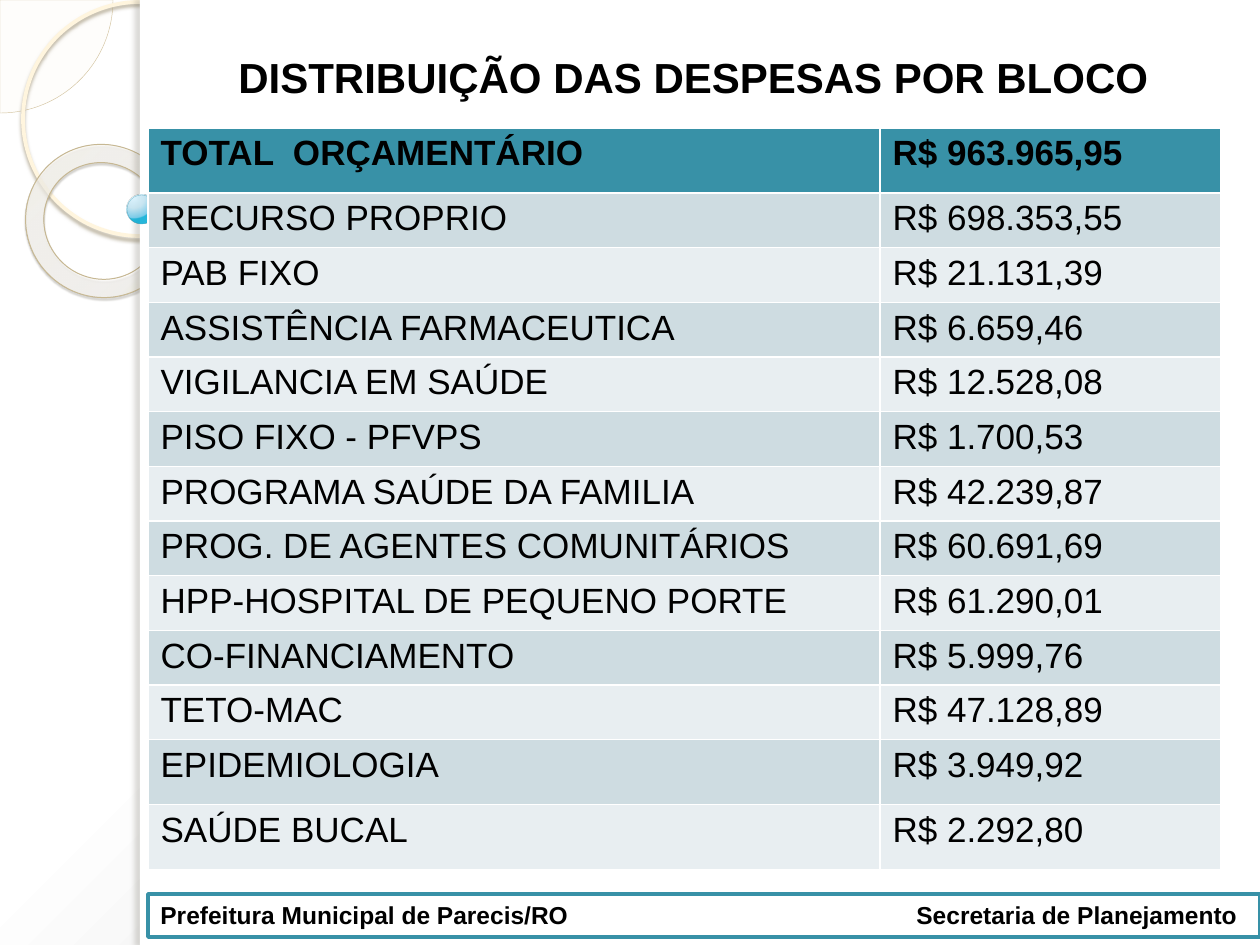
from lxml.etree import SubElement
from pptx import Presentation
from pptx.dml.color import RGBColor
from pptx.enum.shapes import MSO_SHAPE
from pptx.enum.text import MSO_ANCHOR, PP_ALIGN
from pptx.oxml.ns import qn
from pptx.util import Pt

PX = 914400 / 126
COLORS = {
    "white": "FFFFFF", "black": "000000", "teal": "3891A7",
    "band_dark": "CEDCE1", "band_light": "E8EEF1", "gray": "C5C5C5",
    "cream": "FEFAF4", "sand": "D3C39F", "ivory": "FFF5DE", "ring_line": "C7B893",
    "ring_pale": "FFFCF6", "ring_mid": "FFFEFB", "ring_gold": "F0D28E",
    "halo_shade": "B0A68F", "ring_shade": "5A5444", "edge_shade": "736F63",
    "bead_pale": "DAF4FF", "bead_soft": "C3E3F0", "bead_blue": "6BC7E8",
    "bead_deep": "00ABD5", "bead_line": "308EA5", "dot_line": "318093",
}


def write_text(frame, text, size=20, bold=False, align=PP_ALIGN.LEFT, anchor=MSO_ANCHOR.TOP):
    frame.word_wrap = True
    frame.vertical_anchor = anchor
    paragraph = frame.paragraphs[0]
    paragraph.alignment = align
    run = paragraph.add_run()
    run.text = text
    run.font.name = "Arial"
    run.font.size = Pt(size)
    run.font.bold = bold
    run.font.color.rgb = RGBColor.from_string(COLORS["black"])
    return paragraph


def radial_fill(fill, owner, stops, focus):
    fill.gradient()
    gradient = owner.find(".//" + qn("a:gradFill"))
    for child in list(gradient):
        gradient.remove(child)
    stop_list = SubElement(gradient, qn("a:gsLst"))
    for position, color, opacity in stops:
        stop = SubElement(stop_list, qn("a:gs"), pos=str(position * 1000))
        tint = SubElement(stop, qn("a:srgbClr"), val=COLORS[color])
        SubElement(tint, qn("a:alpha"), val=str(opacity * 1000))
    circle = SubElement(gradient, qn("a:path"), {"path": "circle"})
    SubElement(circle, qn("a:fillToRect"),
               {side: str(value * 1000) for side, value in zip("ltrb", focus)})


presentation = Presentation()
presentation.slide_width = round(1260 * PX)
presentation.slide_height = round(945 * PX)
slide = presentation.slides.add_slide(presentation.slide_layouts[6])
radial_fill(slide.background.fill, slide.element,
            [(0, "white", 100), (40, "white", 100), (100, "gray", 100)],
            (-24, -20, 124, 120))

ornaments = [
    dict(kind=MSO_SHAPE.PIE, box=(-113, -113, 226, 226), adjust=(0, 54.02),
         fill=("cream", 33), line=("sand", 0.25, 100)),
    dict(kind=MSO_SHAPE.OVAL, box=(23, 2, 234, 234), line=("ivory", 2.15, 100),
         shadow=("halo_shade", 85, 2, 2, 90)),
    dict(kind=MSO_SHAPE.DONUT, box=(25, 145, 155, 152), adjust=(0.12,), turn=38.6,
         radial=([(0, "ring_pale", 70), (70, "ring_mid", 55), (100, "ring_gold", 60)],
                 (-408, -50, 508, 150)),
         line=("ring_line", 0.58, 100), shadow=("ring_shade", 35, 1, 1.2, 75)),
    dict(kind=MSO_SHAPE.RECTANGLE, box=(140, 0, 1120, 945), fill=("white", 100)),
    dict(kind=MSO_SHAPE.RECTANGLE, box=(140, 0, 10, 945), fill=("white", 100),
         shadow=("edge_shade", 25, 3, 3, 180)),
    dict(kind=MSO_SHAPE.OVAL, box=(127, 195, 29, 29),
         radial=([(0, "bead_pale", 95), (50, "bead_soft", 90),
                  (95, "bead_blue", 88), (100, "bead_deep", 85)], (25, 12, 75, 88)),
         line=("bead_line", 0.16, 60)),
    dict(kind=MSO_SHAPE.OVAL, box=(160, 185, 9, 9), line=("dot_line", 1, 60)),
]
for look in ornaments:
    ornament = slide.shapes.add_shape(look["kind"], *(round(v * PX) for v in look["box"]))
    ornament.rotation = look.get("turn", 0)
    for index, value in enumerate(look.get("adjust", ())):
        ornament.adjustments[index] = value
    ornament.shadow.inherit = False
    if "radial" in look:
        radial_fill(ornament.fill, ornament.element, *look["radial"])
    elif "fill" in look:
        color, opacity = look["fill"]
        ornament.fill.solid()
        ornament.fill.fore_color.rgb = RGBColor.from_string(COLORS[color])
        tint = ornament.element.spPr.find(qn("a:solidFill") + "/" + qn("a:srgbClr"))
        SubElement(tint, qn("a:alpha"), val=str(opacity * 1000))
    else:
        ornament.fill.background()
    if "line" in look:
        color, width, opacity = look["line"]
        ornament.line.color.rgb = RGBColor.from_string(COLORS[color])
        ornament.line.width = Pt(width)
        tint = ornament.element.spPr.find(qn("a:ln") + "//" + qn("a:srgbClr"))
        SubElement(tint, qn("a:alpha"), val=str(opacity * 1000))
    else:
        ornament.line.fill.background()
    if "shadow" in look:
        color, opacity, blur, distance, angle = look["shadow"]
        effects = ornament.element.spPr.find(qn("a:effectLst"))
        shade = SubElement(effects, qn("a:outerShdw"), blurRad=str(Pt(blur)),
                           dist=str(Pt(distance)), dir=str(angle * 60000))
        tint = SubElement(shade, qn("a:srgbClr"), val=COLORS[color])
        SubElement(tint, qn("a:alpha"), val=str(opacity * 1000))

title = slide.shapes.add_textbox(*(round(v * PX) for v in (158, 20, 1071, 88)))
write_text(title.text_frame, "DISTRIBUIÇÃO DAS DESPESAS POR BLOCO", size=24, bold=True,
           align=PP_ALIGN.CENTER, anchor=MSO_ANCHOR.BOTTOM)

expenses = [
    ("TOTAL  ORÇAMENTÁRIO", "R$ 963.965,95"),
    ("RECURSO PROPRIO", "R$ 698.353,55"),
    ("PAB FIXO", "R$ 21.131,39"),
    ("ASSISTÊNCIA FARMACEUTICA", "R$ 6.659,46"),
    ("VIGILANCIA EM SAÚDE", "R$ 12.528,08"),
    ("PISO FIXO - PFVPS", "R$ 1.700,53"),
    ("PROGRAMA SAÚDE DA FAMILIA", "R$ 42.239,87"),
    ("PROG. DE AGENTES COMUNITÁRIOS", "R$ 60.691,69"),
    ("HPP-HOSPITAL DE PEQUENO PORTE", "R$ 61.290,01"),
    ("CO-FINANCIAMENTO", "R$ 5.999,76"),
    ("TETO-MAC", "R$ 47.128,89"),
    ("EPIDEMIOLOGIA", "R$ 3.949,92"),
    ("SAÚDE BUCAL", "R$ 2.292,80"),
]
row_heights = [65] + [52] * 10 + [65] * 2
budget = slide.shapes.add_table(
    len(expenses), 2,
    *(round(v * PX) for v in (148, 128, 1073, sum(row_heights)))).table
for column, width in zip(budget.columns, (732, 341)):
    column.width = round(width * PX)
for number, (entry, height) in enumerate(zip(expenses, row_heights)):
    budget.rows[number].height = round(height * PX)
    band = "teal" if number == 0 else "band_dark" if number % 2 else "band_light"
    for cell, text in zip(budget.rows[number].cells, entry):
        cell.fill.solid()
        cell.fill.fore_color.rgb = RGBColor.from_string(COLORS[band])
        write_text(cell.text_frame, text, bold=number == 0)

footer = slide.shapes.add_shape(MSO_SHAPE.RECTANGLE,
                                *(round(v * PX) for v in (148, 894, 1112, 43)))
footer.shadow.inherit = False
footer.fill.solid()
footer.fill.fore_color.rgb = RGBColor.from_string(COLORS["white"])
footer.line.color.rgb = RGBColor.from_string(COLORS["teal"])
footer.line.width = Pt(2)
credits = write_text(footer.text_frame,
                     "Prefeitura Municipal de Parecis/RO\tSecretaria de Planejamento",
                     size=14, bold=True)
tab_list = SubElement(credits._p.get_or_add_pPr(), qn("a:tabLst"))
SubElement(tab_list, qn("a:tab"), pos=str(round(756 * PX)), algn="l")

presentation.save("out.pptx")
